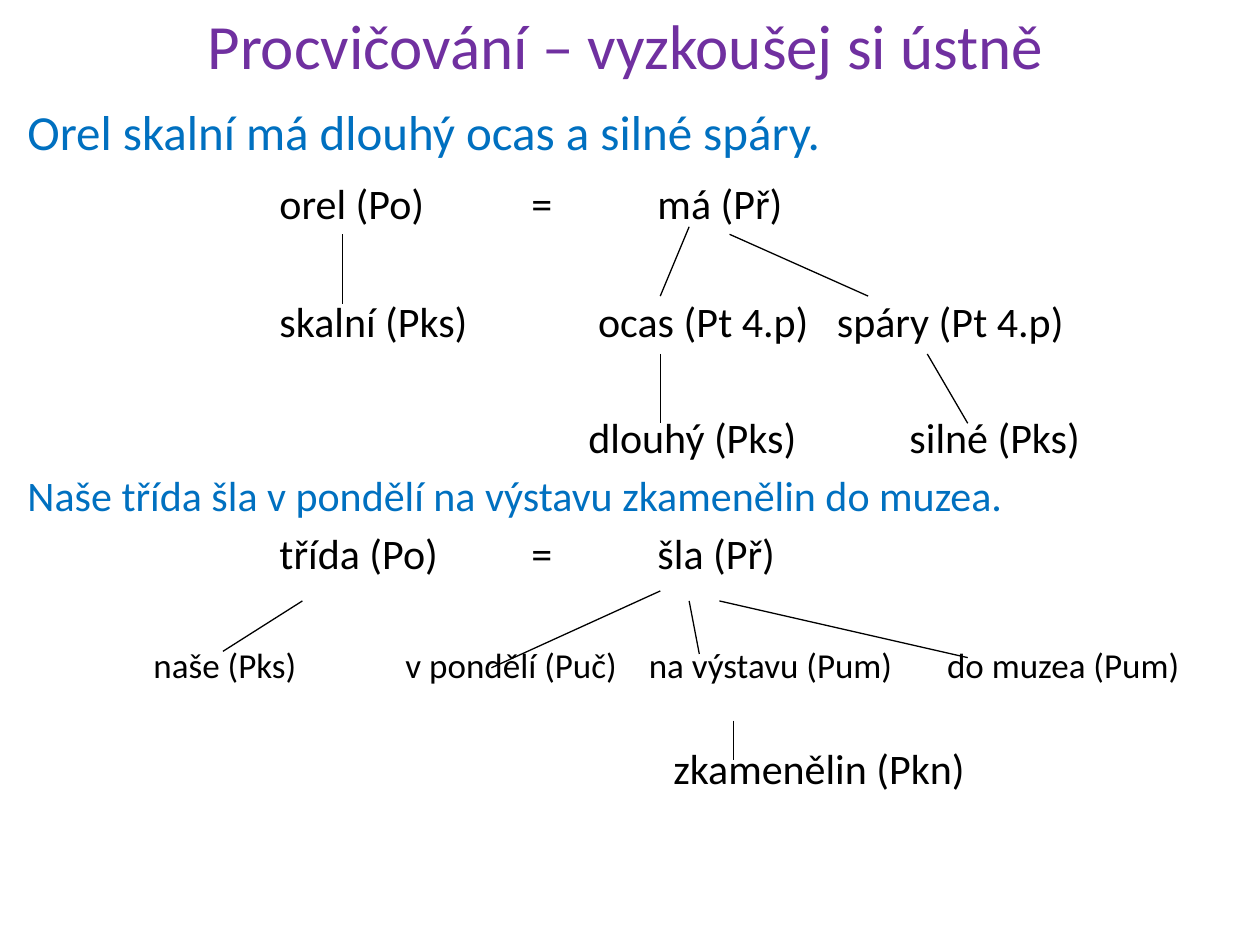
from lxml.etree import SubElement
from pptx import Presentation
from pptx.dml.color import RGBColor as Rgb
from pptx.enum.shapes import MSO_CONNECTOR as Link
from pptx.enum.text import MSO_ANCHOR as Anchor, PP_ALIGN as Align
from pptx.oxml.ns import qn
from pptx.util import Pt

HUES = {"title": "7030A0", "lead": "0070C0", "ink": "000000"}

deck = Presentation()
deck.slide_width, deck.slide_height = Pt(720), Pt(540)
slide = deck.slides.add_slide(deck.slide_layouts[6])


def add_box(left, top, width, height):
    box = slide.shapes.add_textbox(Pt(left), Pt(top), Pt(width), Pt(height))
    box.text_frame.word_wrap = True
    return box.text_frame


def add_run(para, text, size, hue):
    run = para.add_run()
    run.text = text
    run.font.name = "Calibri"
    run.font.size = Pt(size)
    run.font.color.rgb = Rgb.from_string(HUES[hue])


# Title
title = add_box(8.64, -19.44, 697.68, 90)
title.vertical_anchor = Anchor.MIDDLE
title.paragraphs[0].alignment = Align.CENTER
add_run(title.paragraphs[0], "Procvičování – vyzkoušej si ústně", 36, "title")

# Sentences and their parts: space before, size, colour, {tab stop: words}
rows = [
    (0, 28, "lead", {0: "Orel skalní má dlouhý ocas a silné spáry."}),
    (9.5, 24, "ink", {144: "orel (Po)", 288: "=", 360: "má (Př)"}),
    (38.7, 24, "ink", {144: "skalní (Pks)", 326: "ocas (Pt 4.p)",
                       462.5: "spáry (Pt 4.p)"}),
    (37.4, 24, "ink", {320.5: "dlouhý (Pks)", 504: "silné (Pks)"}),
    (4.4, 24, "lead",
     {0: "Naše třída šla v pondělí na výstavu zkamenělin do muzea."}),
    (4.4, 24, "ink", {144: "třída (Po)", 288: "=", 360: "šla (Př)"}),
    (37.2, 20, "ink", {72: "naše (Pks)", 216: "v pondělí (Puč)",
                       355: "na výstavu (Pum)", 525.5: "do muzea (Pum)"}),
    (33.1, 24, "ink", {369: "zkamenělin (Pkn)"}),
]
body = add_box(8.64, 54.72, 702.72, 475.92)
for num, (gap, size, hue, parts) in enumerate(rows):
    para = body.add_paragraph() if num else body.paragraphs[0]
    stops = [stop for stop in parts if stop]
    if stops:
        tabs = SubElement(para._p.get_or_add_pPr(), qn("a:tabLst"))
        for stop in stops:
            SubElement(tabs, qn("a:tab"), pos=str(Pt(stop)), algn="l")
    if gap:
        para.space_before = Pt(gap)
    for stop, words in parts.items():
        add_run(para, "\t" + words if stop else words, size, hue)

# Branches of both sentence trees: x and y of start, x and y of end
branches = [
    (195.8, 133.9, 195.8, 173.5),
    (393.8, 129.6, 377.3, 169.2),
    (416.9, 133.9, 496.1, 169.2),
    (377.3, 202.3, 377.3, 241.9),
    (529.9, 202.3, 553, 241.9),
    (172.8, 343.4, 127.4, 372.2),
    (377.3, 337.7, 280.8, 381.6),
    (393.8, 343.4, 399.6, 373.7),
    (411.1, 343.4, 553, 375.8),
    (419, 411.8, 419, 434.2),
]
for ends in branches:
    line = slide.shapes.add_connector(Link.STRAIGHT, *map(Pt, ends))
    line.line.color.rgb = Rgb.from_string(HUES["ink"])
    line.line.width = Pt(0.75)
    SubElement(line._element.spPr, qn("a:effectLst"))

deck.save("out.pptx")
